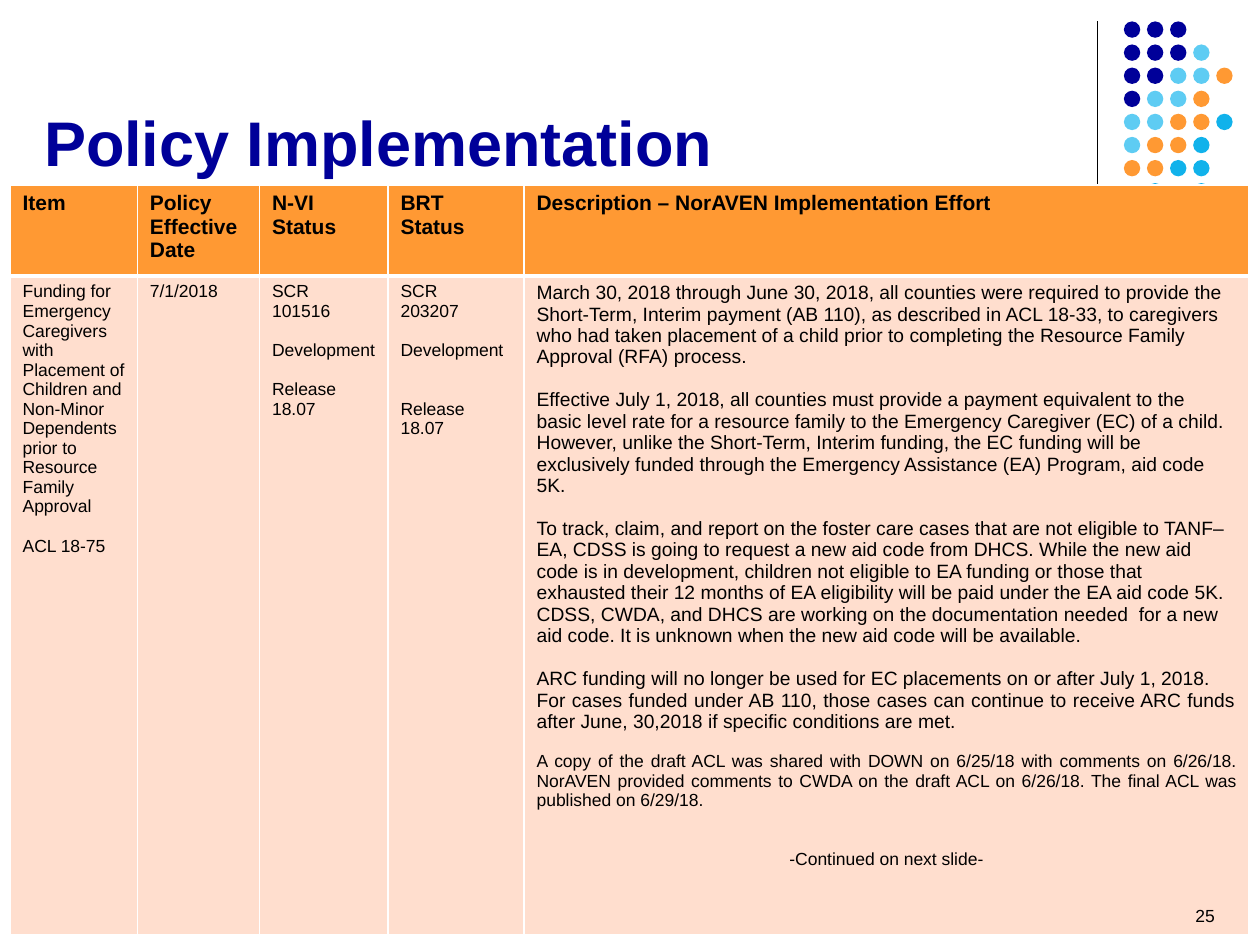
from dataclasses import dataclass

from lxml.etree import SubElement
from pptx import Presentation
from pptx.dml.color import RGBColor
from pptx.enum.shapes import MSO_CONNECTOR, MSO_SHAPE
from pptx.enum.text import MSO_ANCHOR, MSO_AUTO_SIZE, PP_ALIGN
from pptx.oxml.ns import qn
from pptx.util import Inches, Pt


@dataclass(frozen=True)
class Theme:
    font: str = "Arial"
    navy: str = "000099"
    sky: str = "5ECCF3"
    orange: str = "FF9933"
    blue: str = "11B2EB"
    peach: str = "FFDECE"
    black: str = "000000"
    white: str = "FFFFFF"
    title_size: int = 36
    header_size: int = 12
    description_size: int = 11
    small_size: int = 10
    line_height: float = 1.12


@dataclass(frozen=True)
class Para:
    text: str
    size: int
    lines_before: int = 0
    align: PP_ALIGN = PP_ALIGN.LEFT
    bold: bool = False


THEME = Theme()
SMALL = THEME.small_size
MEDIUM = THEME.description_size

DOT_ROWS = ["NNN", "NNNS", "NNSSO", "NSSO", "SSOOB", "SOOB", "OOBB", " B B"]
DOT_COLORS = {"N": THEME.navy, "S": THEME.sky, "O": THEME.orange, "B": THEME.blue}
DOT_PITCH = 1.1 / 6

COLUMN_WIDTHS = [1.01, 0.97, 1.02, 1.08, 5.75]
ROW_HEIGHTS = [0.72, 5.23]
HEADERS = [
    "Item",
    "Policy Effective Date",
    "N-VI Status",
    "BRT Status",
    "Description – NorAVEN Implementation Effort",
]
POLICY = [
    [
        Para("Funding for Emergency Caregivers with Placement of Children and "
             "Non-Minor Dependents prior to Resource Family Approval", SMALL),
        Para("ACL 18-75", SMALL, 1),
    ],
    [Para("7/1/2018", SMALL)],
    [
        Para("SCR", SMALL),
        Para("101516", SMALL),
        Para("Development", SMALL, 1),
        Para("Release", SMALL, 1),
        Para("18.07", SMALL),
    ],
    [
        Para("SCR", SMALL),
        Para("203207", SMALL),
        Para("Development", SMALL, 1),
        Para("Release \v18.07", SMALL, 2),
    ],
    [
        Para("March 30, 2018 through June 30, 2018, all counties were required to provide "
             "the Short-Term, Interim payment (AB 110), as described in ACL 18-33, to "
             "caregivers who had taken placement of a child prior to completing the "
             "Resource Family Approval (RFA) process.", MEDIUM),
        Para("Effective July 1, 2018, all counties must provide a payment equivalent to the "
             "basic level rate for a resource family to the Emergency Caregiver (EC) of a "
             "child.  However, unlike the Short-Term, Interim funding, the EC funding will "
             "be exclusively funded through the Emergency Assistance (EA) Program, aid "
             "code 5K.", MEDIUM, 1),
        Para("To track, claim, and report on the foster care cases that are not eligible to "
             "TANF–EA, CDSS is going to request a new aid code from DHCS. While the new aid "
             "code is in development, children not eligible to EA funding or those that "
             "exhausted their 12 months of EA eligibility will be paid under the EA aid "
             "code 5K. CDSS, CWDA, and DHCS are working on the documentation needed  for a "
             "new aid code. It is unknown when the new aid code will be available.",
             MEDIUM, 1),
        Para("ARC funding will no longer be used for EC placements on or after "
             "July 1, 2018.", MEDIUM, 1),
        Para("For cases funded under AB 110, those cases can continue to receive ARC funds "
             "after June, 30,2018 if specific conditions are met.",
             MEDIUM, align=PP_ALIGN.JUSTIFY),
        Para("A copy of the draft ACL was shared with DOWN on 6/25/18 with comments on "
             "6/26/18. NorAVEN provided comments to CWDA on the draft ACL on 6/26/18. The "
             "final ACL was published on 6/29/18.", SMALL, 1, PP_ALIGN.JUSTIFY),
        Para("-Continued on next slide-", SMALL, 2, PP_ALIGN.CENTER),
    ],
]


def rgb(color):
    return RGBColor.from_string(color)


def write(frame, paras, color=THEME.black):
    frame.word_wrap = True
    for index, para in enumerate(paras):
        paragraph = frame.add_paragraph() if index else frame.paragraphs[0]
        paragraph.text = para.text
        paragraph.alignment = para.align
        paragraph.space_before = Pt(round(para.lines_before * para.size * THEME.line_height, 1))
        font = paragraph.font
        font.name, font.size, font.bold = THEME.font, Pt(para.size), para.bold
        font.color.rgb = rgb(color)


def add_title(slide):
    title = slide.shapes.title
    title.left, title.top = Inches(0.25), Inches(0.27)
    title.width, title.height = Inches(8.42), Inches(1.2)
    frame = title.text_frame
    frame.auto_size = MSO_AUTO_SIZE.NONE
    frame.vertical_anchor = MSO_ANCHOR.BOTTOM
    write(frame, [Para("Policy Implementation", THEME.title_size, bold=True)], THEME.navy)


def add_divider(slide):
    divider = slide.shapes.add_connector(
        MSO_CONNECTOR.STRAIGHT, Inches(8.71), Inches(0.17), Inches(8.71), Inches(1.57))
    divider.line.color.rgb = rgb(THEME.black)
    divider.line.width = Pt(0.75)
    SubElement(divider._element.spPr, qn("a:effectLst"))


def add_dots(slide):
    dots = slide.shapes.add_group_shape().shapes
    for row, codes in enumerate(DOT_ROWS):
        for column, code in enumerate(codes):
            if code == " ":
                continue
            dot = dots.add_shape(
                MSO_SHAPE.OVAL, Inches(8.92 + column * DOT_PITCH),
                Inches(0.17 + row * DOT_PITCH), Inches(0.13), Inches(0.13))
            dot.shadow.inherit = False
            dot.fill.solid()
            dot.fill.fore_color.rgb = rgb(DOT_COLORS[code])
            dot.line.fill.background()


def set_borders(cell, top, bottom):
    properties = cell._tc.get_or_add_tcPr()
    for side, width in (("L", 1), ("R", 1), ("T", top), ("B", bottom)):
        border = SubElement(properties, qn(f"a:ln{side}"), w=str(Pt(width)))
        fill = SubElement(border, qn("a:solidFill"))
        SubElement(fill, qn("a:srgbClr"), val=THEME.white)


def fill_cell(cell, paras, color, top, bottom):
    set_borders(cell, top, bottom)
    cell.fill.solid()
    cell.fill.fore_color.rgb = rgb(color)
    write(cell.text_frame, paras)


def add_policy_table(slide):
    table = slide.shapes.add_table(
        len(ROW_HEIGHTS), len(COLUMN_WIDTHS), Inches(0.08), Inches(1.47),
        Inches(sum(COLUMN_WIDTHS)), Inches(sum(ROW_HEIGHTS))).table
    table.horz_banding = False
    for row, height in zip(table.rows, ROW_HEIGHTS):
        row.height = Inches(height)
    for column, width in enumerate(COLUMN_WIDTHS):
        table.columns[column].width = Inches(width)
        header = Para(HEADERS[column], THEME.header_size, bold=True)
        fill_cell(table.cell(0, column), [header], THEME.orange, 1, 3)
        fill_cell(table.cell(1, column), POLICY[column], THEME.peach, 3, 1)


def add_page_number(slide):
    number = slide.shapes.add_textbox(Inches(7.41), Inches(7.13), Inches(2.33), Inches(0.33))
    write(number.text_frame, [Para("25", SMALL, align=PP_ALIGN.RIGHT)])


def main():
    deck = Presentation()
    deck.slide_width, deck.slide_height = Inches(10), Inches(7.5)
    slide = deck.slides.add_slide(deck.slide_layouts[5])
    add_divider(slide)
    add_dots(slide)
    add_title(slide)
    add_policy_table(slide)
    add_page_number(slide)
    deck.save("out.pptx")


if __name__ == "__main__":
    main()
